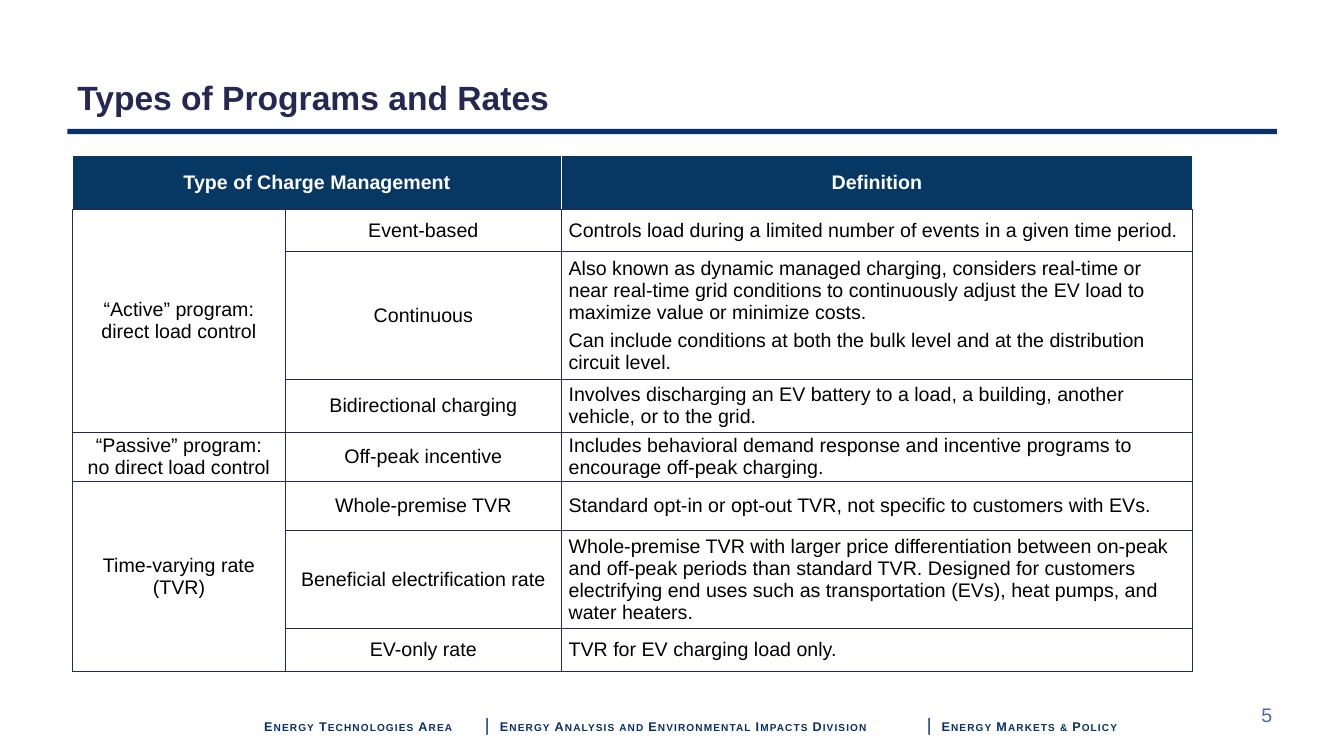
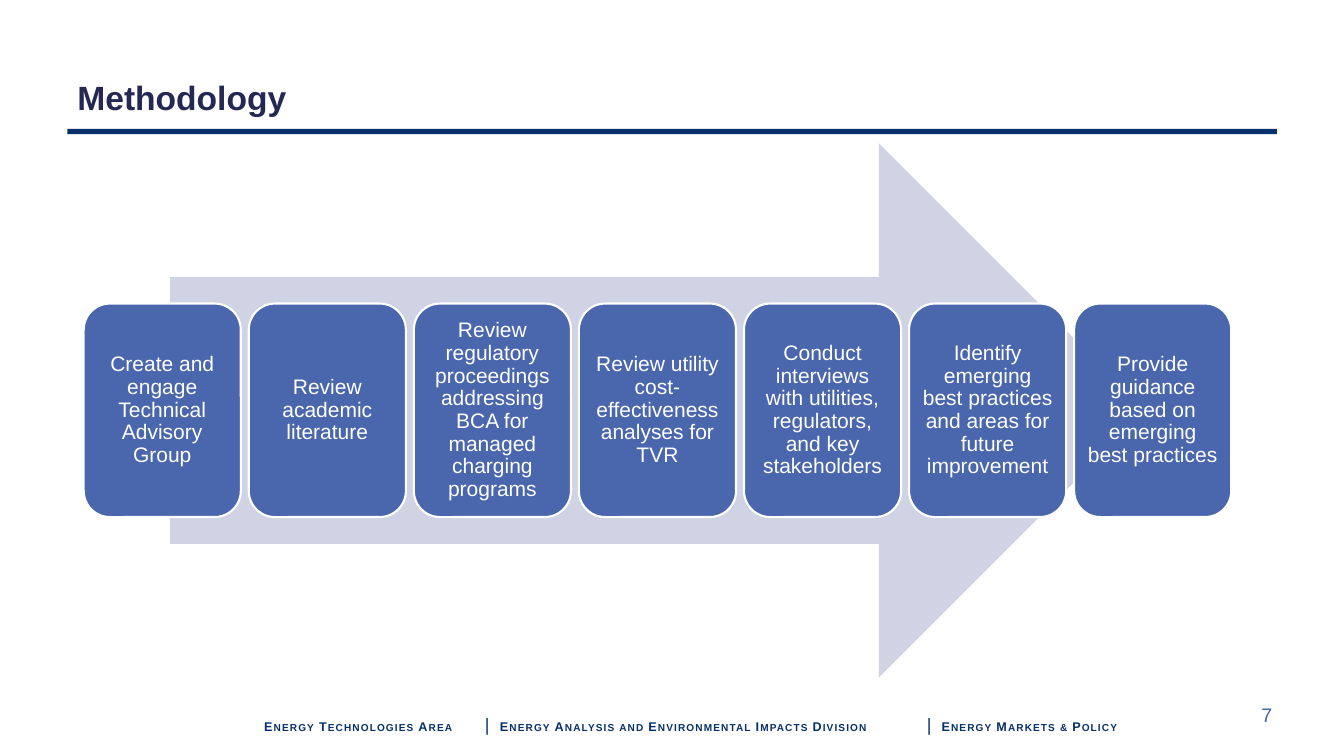
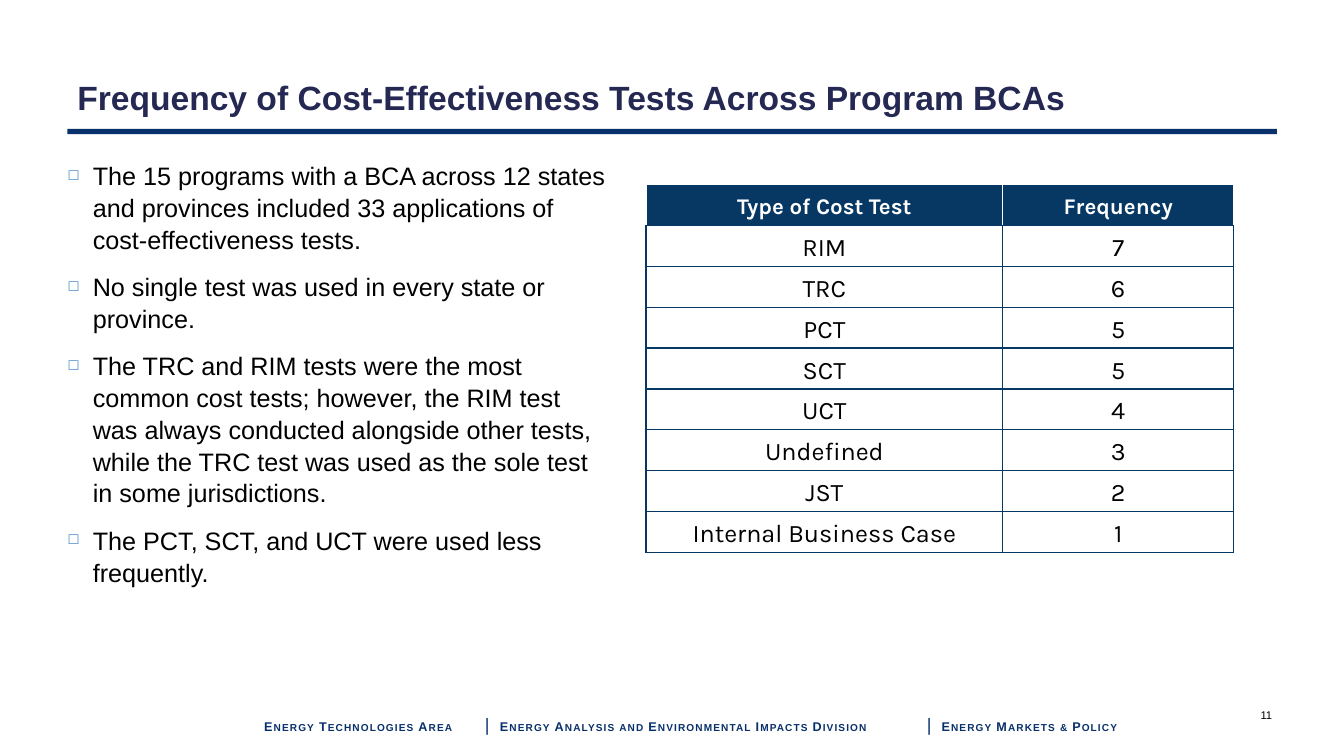
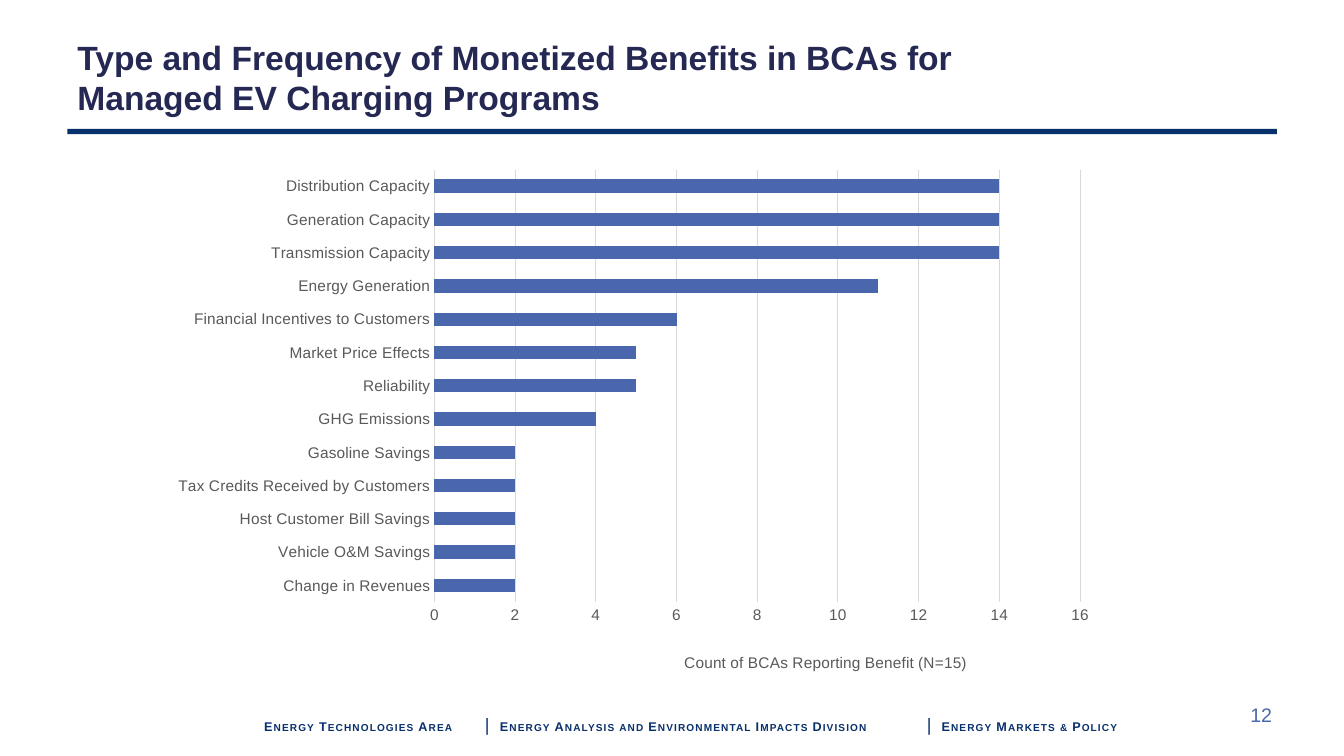
import copy
import dataclasses

import pptx
import pptx.chart.data
import pptx.dml.color
import pptx.enum.chart
import pptx.enum.shapes
import pptx.enum.text
import pptx.oxml
import pptx.oxml.ns
import pptx.util

Cm = pptx.util.Cm
Pt = pptx.util.Pt
qn = pptx.oxml.ns.qn
ALIGN = pptx.enum.text.PP_ALIGN
ANCHOR = pptx.enum.text.MSO_ANCHOR
SHAPE = pptx.enum.shapes.MSO_SHAPE


@dataclasses.dataclass(frozen=True)
class Theme:
    font: str = "Arial"
    table_font: str = "Karla"
    white: str = "FFFFFF"
    black: str = "000000"
    band: str = "08306A"
    title: str = "242852"
    header: str = "073763"
    accent: str = "4A66AC"
    arrow: str = "D0D3E3"
    bullet: str = "629DD1"
    axis: str = "595959"
    grid: str = "D9D9D9"
    title_size: int = 24
    body_size: int = 18
    label_size: int = 16
    step_size: int = 15
    cell_size: int = 14
    chart_size: int = 11
    footer_size: int = 9
    small_size: int = 8


T = Theme()

PROGRAMS = [
    ["Type of Charge Management", "", "Definition"],
    ["“Active” program: direct load control", "Event-based",
     "Controls load during a limited number of events in a given time period."],
    ["", "Continuous",
     ["Also known as dynamic managed charging, considers real-time or near real-time grid "
      "conditions to continuously adjust the EV load to maximize value or minimize costs.",
      "Can include conditions at both the bulk level and at the distribution circuit level."]],
    ["", "Bidirectional charging",
     "Involves discharging an EV battery to a load, a building, another vehicle, or to the grid."],
    ["“Passive” program:\nno direct load control", "Off-peak incentive",
     "Includes behavioral demand response and incentive programs to encourage off-peak charging."],
    ["Time-varying rate (TVR)", "Whole-premise TVR",
     "Standard opt-in or opt-out TVR, not specific to customers with EVs."],
    ["", "Beneficial electrification rate",
     "Whole-premise TVR with larger price differentiation between on-peak and off-peak periods "
     "than standard TVR. Designed for customers electrifying end uses such as transportation "
     "(EVs), heat pumps, and water heaters."],
    ["", "EV-only rate", "TVR for EV charging load only."],
]

STEPS = [
    "Create and engage Technical Advisory Group",
    "Review academic literature",
    "Review regulatory proceedings addressing BCA for managed charging programs",
    "Review utility cost-effectiveness analyses for TVR",
    "Conduct interviews with utilities, regulators, and key stakeholders",
    "Identify emerging best practices and areas for future improvement",
    "Provide guidance based on emerging best practices",
]

FINDINGS = [
    "The 15 programs with a BCA across 12 states and provinces included 33 applications of "
    "cost-effectiveness tests.",
    "No single test was used in every state or province.",
    "The TRC and RIM tests were the most common cost tests; however, the RIM test was always "
    "conducted alongside other tests, while the TRC test was used as the sole test in some "
    "jurisdictions.",
    "The PCT, SCT, and UCT were used less frequently.",
]

COST_TESTS = [
    ["Type of Cost Test", "Frequency"],
    ["RIM", "7"], ["TRC", "6"], ["PCT", "5"], ["SCT", "5"], ["UCT", "4"],
    ["Undefined", "3"], ["JST", "2"], ["Internal Business Case", "1"],
]

BENEFITS = {
    "Change in Revenues": 2,
    "Vehicle O&M Savings": 2,
    "Host Customer Bill Savings": 2,
    "Tax Credits Received by Customers": 2,
    "Gasoline Savings": 2,
    "GHG Emissions": 4,
    "Reliability": 5,
    "Market Price Effects": 5,
    "Financial Incentives to Customers": 6,
    "Energy Generation": 11,
    "Transmission Capacity": 14,
    "Generation Capacity": 14,
    "Distribution Capacity": 14,
}


def rgb(color):
    return pptx.dml.color.RGBColor.from_string(color)


def apply(obj, values):
    for name, value in values.items():
        setattr(obj, name, value)


def set_font(font, size, color, bold=False, name=T.font):
    apply(font, {"size": Pt(size), "bold": bold, "name": name})
    font.color.rgb = rgb(color)


def write(tf, texts, font, para=None, before=0):
    for i, text in enumerate(texts):
        p = tf.paragraphs[0] if i == 0 else tf.add_paragraph()
        p.text = text
        apply(p, para or {})
        if i and before:
            p.space_before = Pt(before)
        for r in p.runs:
            set_font(r.font, **font)
        for br in p._p.findall(qn("a:br")):
            br.insert(0, copy.deepcopy(p.runs[0]._r.rPr))


def add_text(s, box, texts, font, para=None, frame=None, before=0):
    tf = s.shapes.add_textbox(*map(Cm, box)).text_frame
    apply(tf, {"word_wrap": True, **(frame or {})})
    write(tf, texts, font, para, before)
    return tf


def add_shape(s, kind, box, fill, line=None):
    sp = s.shapes.add_shape(kind, *map(Cm, box))
    sp.shadow.inherit = False
    sp.fill.solid()
    sp.fill.fore_color.rgb = rgb(fill)
    if line:
        sp.line.color.rgb = rgb(line)
        sp.line.width = Pt(1.5)
    else:
        sp.line.fill.background()
    return sp


def add_xml(parent, tag, body="", **attrs):
    values = "".join(f' {k}="{v}"' for k, v in attrs.items())
    prefix = tag.split(":")[0]
    parent.append(pptx.oxml.parse_xml(
        f"<{tag} {pptx.oxml.ns.nsdecls(prefix)}{values}>{body}</{tag}>"))


def add_footer(s):
    tf = add_text(s, (5.44, 17.75, 24.56, 1.22), [""], {},
                  frame={"margin_left": Cm(1.22), "margin_right": 0})
    p = tf.paragraphs[0]
    stops = "".join(f'<a:tab pos="{Cm(x)}" algn="l"/>' for x in (5.56, 5.94, 16.7, 17.07))
    add_xml(p._p.get_or_add_pPr(), "a:tabLst", stops)
    for text in ("Energy Technologies Area\t", "|\t",
                 "Energy Analysis and Environmental Impacts Division\t", "|\t",
                 "Energy Markets & Policy"):
        r = p.add_run()
        r.text = text
        is_bar = text.startswith("|")
        set_font(r.font, T.label_size if is_bar else T.footer_size, T.band, not is_bar)
        for name, value in {"cap": "small", "spc": "80"}.items():
            r._r.rPr.set(name, value)


def add_slide(prs, title, number, size=T.cell_size, color=T.accent):
    s = prs.slides.add_slide(prs.slide_layouts[6])
    add_shape(s, SHAPE.RECTANGLE, (1.7, 3.25, 30.48, 0.13), T.band)
    add_footer(s)
    height = 1.27 + 1.03 * title.count("\n")
    add_text(s, (1.7, 3.08 - height, 30.48, height), [title],
             {"size": T.title_size, "color": T.title, "bold": True},
             frame={"vertical_anchor": ANCHOR.BOTTOM})
    add_text(s, (31.04, 17.5, 1.27, 1.02), [str(number)], {"size": size, "color": color},
             {"alignment": ALIGN.RIGHT}, {"vertical_anchor": ANCHOR.MIDDLE})
    return s


def set_borders(cell, colors):
    for side, color in colors.items():
        add_xml(cell._tc.get_or_add_tcPr(), f"a:ln{side}",
                f'<a:solidFill><a:srgbClr val="{color}"/></a:solidFill>', w=Pt(1))


def add_table(s, left, top, widths, heights, rows, fonts, border, inset, para,
              merges=(), left_column=None, before=0):
    table = s.shapes.add_table(len(rows), len(widths), Cm(left), Cm(top),
                               Cm(sum(widths)), Cm(sum(heights))).table
    apply(table, {"first_row": False, "horz_banding": False})
    for column, width in zip(table.columns, widths):
        column.width = Cm(width)
    for row, height in zip(table.rows, heights):
        row.height = Cm(height)
    for i, row in enumerate(rows):
        for j, content in enumerate(row):
            cell = table.cell(i, j)
            apply(cell, {"margin_left": Cm(inset), "margin_right": Cm(inset),
                         "margin_top": 0, "margin_bottom": 0,
                         "vertical_anchor": ANCHOR.MIDDLE})
            edge = border if i else T.white
            set_borders(cell, {"L": edge, "R": edge, "T": edge, "B": border})
            cell.fill.solid()
            cell.fill.fore_color.rgb = rgb(T.white if i else T.header)
            align = ALIGN.LEFT if i and j == left_column else ALIGN.CENTER
            if content:
                texts = content if isinstance(content, list) else [content]
                write(cell.text_frame, texts, fonts[min(i, 1)],
                      {"alignment": align, **para}, before)
    for start, end in merges:
        table.cell(*start).merge(table.cell(*end))


def add_bullets(s, box, texts):
    tf = add_text(s, box, texts, {"size": T.body_size, "color": T.black},
                  {"space_after": Pt(6), "line_spacing": 1.05},
                  dict.fromkeys(("margin_left", "margin_right", "margin_top",
                                 "margin_bottom"), 0), before=5.2)
    for p in tf.paragraphs:
        pPr = p._p.get_or_add_pPr()
        for name, value in {"marL": Cm(0.64), "indent": -Cm(0.64)}.items():
            pPr.set(name, str(value))
        add_xml(pPr, "a:buClr", f'<a:srgbClr val="{T.bullet}"/>')
        add_xml(pPr, "a:buSzPct", val=60000)
        add_xml(pPr, "a:buChar", char="◻")


def add_steps(s, left, top, width, height, gap, texts):
    for i, text in enumerate(texts):
        sp = add_shape(s, SHAPE.ROUNDED_RECTANGLE,
                       (left + i * (width + gap), top, width, height), T.accent, T.white)
        tf = sp.text_frame
        apply(tf, {"word_wrap": True, "vertical_anchor": ANCHOR.MIDDLE,
                   **dict.fromkeys(("margin_left", "margin_right", "margin_top",
                                    "margin_bottom"), Cm(0.15))})
        write(tf, [text], {"size": T.step_size, "color": T.white},
              {"alignment": ALIGN.CENTER, "line_spacing": 0.9})


def set_layout(parent, index, target="", **values):
    for old in parent.findall(qn("c:layout")):
        parent.remove(old)
    modes = "".join(f'<c:{k}Mode val="edge"/>' for k in ("x", "y"))
    places = "".join(f'<c:{k} val="{v}"/>' for k, v in values.items())
    parent.insert(index, pptx.oxml.parse_xml(
        f'<c:layout {pptx.oxml.ns.nsdecls("c")}><c:manualLayout>'
        f"{target}{modes}{places}</c:manualLayout></c:layout>"))


def add_bar_chart(s, box, values, axis_title):
    data = pptx.chart.data.CategoryChartData()
    data.categories = list(values)
    data.add_series("Series 1", list(values.values()))
    chart = s.shapes.add_chart(pptx.enum.chart.XL_CHART_TYPE.BAR_STACKED,
                               *map(Cm, box), data).chart
    apply(chart, {"has_legend": False, "has_title": False})
    set_font(chart.font, T.chart_size, T.black)
    plot = chart.plots[0]
    apply(plot, {"gap_width": 150, "overlap": 100, "vary_by_categories": False})
    fill = plot.series[0].format.fill
    fill.solid()
    fill.fore_color.rgb = rgb(T.accent)

    none = pptx.enum.chart.XL_TICK_MARK.NONE
    cat, val = chart.category_axis, chart.value_axis
    for axis in (cat, val):
        apply(axis, {"major_tick_mark": none, "minor_tick_mark": none})
        set_font(axis.tick_labels.font, T.chart_size, T.axis)
    apply(val, {"minimum_scale": 0, "maximum_scale": 16, "major_unit": 2,
                "has_major_gridlines": True})
    val.format.line.fill.background()
    cat.has_major_gridlines = False
    for line in (cat.format.line, val.major_gridlines.format.line):
        line.color.rgb = rgb(T.grid)
        line.width = Pt(0.75)
    write(val.axis_title.text_frame, [axis_title], {"size": T.chart_size, "color": T.axis})
    set_layout(val.axis_title._element, 1, x=0.55, y=0.94)
    set_layout(chart._chartSpace.chart.plotArea, 0, '<c:layoutTarget val="inner"/>',
               x=0.29, y=0.02, w=0.68, h=0.83)


def main():
    prs = pptx.Presentation()
    apply(prs, {"slide_width": Cm(33.87), "slide_height": Cm(19.05)})

    s = add_slide(prs, "Types of Programs and Rates", 5)
    add_table(s, 1.83, 3.92, [5.36, 6.96, 15.9],
              [1.35, 1.07, 3.23, 1.32, 1.24, 1.24, 2.46, 1.1], PROGRAMS,
              [{"size": T.cell_size, "color": T.white, "bold": True},
               {"size": T.cell_size, "color": T.black}],
              T.title, 0.18, {"space_after": Pt(2)},
              merges=[((0, 0), (0, 1)), ((1, 0), (3, 0)), ((5, 0), (7, 0))],
              left_column=2, before=2)

    s = add_slide(prs, "Methodology", 7)
    add_shape(s, SHAPE.RIGHT_ARROW, (4.29, 3.61, 24.59, 13.46), T.arrow)
    add_steps(s, 2.11, 7.65, 3.96, 5.38, 0.2, STEPS)

    s = add_slide(prs, "Frequency of Cost-Effectiveness Tests Across Program BCAs", 11,
                  T.small_size, T.black)
    add_table(s, 16.28, 4.65, [8.99, 5.82], [1.03] * len(COST_TESTS), COST_TESTS,
              [{"size": T.label_size, "color": T.white, "bold": True, "name": T.table_font},
               {"size": T.body_size, "color": T.black, "name": T.table_font}],
              T.header, 0.1, {"line_spacing": 1.15})
    add_bullets(s, (1.7, 4.01, 13.69, 12.14), FINDINGS)

    s = add_slide(prs, "Type and Frequency of Monetized Benefits in BCAs for\n"
                  "Managed EV Charging Programs", 12)
    add_bar_chart(s, (4.01, 4.01, 23.93, 13.13), BENEFITS,
                  "Count of BCAs Reporting Benefit (N=15)")

    prs.save("out.pptx")


if __name__ == "__main__":
    main()
